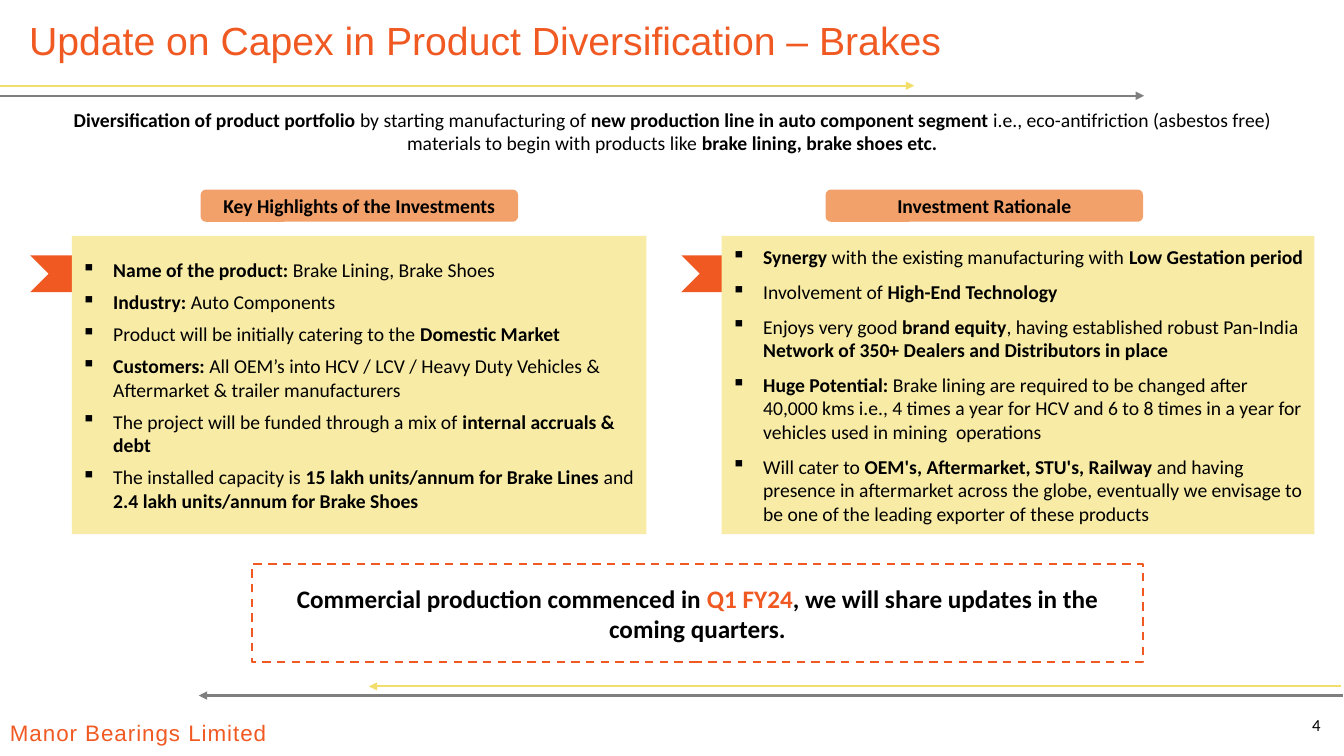
"""Builds the slide on capex in product diversification into brakes."""
from lxml import etree
from pptx import Presentation
from pptx.dml.color import RGBColor
from pptx.enum.dml import MSO_LINE
from pptx.enum.shapes import MSO_CONNECTOR, MSO_SHAPE
from pptx.enum.text import MSO_ANCHOR, PP_ALIGN
from pptx.oxml.ns import qn
from pptx.util import Pt

LEFT, MID, RIGHT = PP_ALIGN.LEFT, PP_ALIGN.CENTER, PP_ALIGN.RIGHT
TOP, CENTRE = MSO_ANCHOR.TOP, MSO_ANCHOR.MIDDLE
RECT, ROUND = MSO_SHAPE.RECTANGLE, MSO_SHAPE.ROUNDED_RECTANGLE
NOTCH = MSO_SHAPE.NOTCHED_RIGHT_ARROW
STRAIGHT, DASH = MSO_CONNECTOR.STRAIGHT, MSO_LINE.DASH
ORANGE, PEACH, CREAM = "F05922", "F2A16A", "F7EBA6"
YELLOW, GREY, BLACK = "F1DE6B", "7F7F7F", "000000"


def rgb(text):
    """Turn a hex string into a colour."""
    return RGBColor.from_string(text)


def write(shape, lines, size=14, color=BLACK, font="Calibri", align=LEFT,
          anchor=CENTRE, gap=0, bullet=False):
    """Fill a shape with paragraphs; text between asterisks is bold."""
    frame = shape.text_frame
    frame.word_wrap = True
    frame.vertical_anchor = anchor
    for i, line in enumerate(lines):
        para = frame.add_paragraph() if i else frame.paragraphs[0]
        para.alignment = align
        para.space_before = Pt(gap if i else 0)
        para.space_after = Pt(gap)
        if bullet:
            props = para._p.get_or_add_pPr()
            props.set("marL", str(Pt(22.5)))
            props.set("indent", str(-Pt(22.5)))
            etree.SubElement(props, qn("a:buChar")).set("char", "▪")
        for j, part in enumerate(line.split("*")):
            if part:
                run = para.add_run()
                run.text = part
                run.font.name = font
                run.font.size = Pt(size)
                run.font.bold = j % 2 == 1
                run.font.color.rgb = rgb(color)
    return frame.paragraphs[0]


deck = Presentation()
deck.slide_width, deck.slide_height = Pt(960), Pt(540)
slide = deck.slides.add_slide(deck.slide_layouts[6])
shapes = slide.shapes

arrows = [
    (959, 142, 496.8, GREY),
    (957.6, 263.5, 490.3, YELLOW),
    (-1.4, 653, 61.2, YELLOW),
    (0, 817.2, 68.4, GREY),
]
for start, end, y, color in arrows:
    arrow = shapes.add_connector(STRAIGHT, Pt(start), Pt(y), Pt(end), Pt(y))
    arrow.line.color.rgb = rgb(color)
    arrow.line.width = Pt(1.5)
    tail = etree.SubElement(arrow.line._get_or_add_ln(), qn("a:tailEnd"))
    tail.set("type", "triangle")
    etree.SubElement(arrow._element.spPr, qn("a:effectLst"))

firm = shapes.add_textbox(Pt(0), Pt(509.8), Pt(215.3), Pt(26.6))
name = write(firm, ["Manor Bearings Limited"], 16, ORANGE, "Arial", anchor=TOP)
name.runs[0]._r.get_or_add_rPr().set("spc", "70")

page = shapes.add_textbox(Pt(919.4), Pt(503.3), Pt(31), Pt(28.8))
write(page, ["4"], 12, align=RIGHT)

title = shapes.add_textbox(Pt(13.7), Pt(10.8), Pt(713.5), Pt(38.9))
head = write(title, ["Update on Capex in Product Diversification – Brakes"],
             28, ORANGE, "Arial")
head.line_spacing = 0.9

intro = shapes.add_textbox(Pt(28.8), Pt(73.4), Pt(902.9), Pt(41))
write(intro, [
    "*Diversification of product portfolio *by starting manufacturing of "
    "*new production line in auto component segment* i.e., eco-antifriction "
    "(asbestos free) materials to begin with products like "
    "*brake lining, brake shoes etc.*"], align=MID, anchor=TOP, gap=4)

facts = [
    "*Name of the product: *Brake Lining, Brake Shoes",
    "*Industry:* Auto Components",
    "Product will be initially catering to the *Domestic Market*",
    "*Customers:* All OEM’s into HCV / LCV / Heavy Duty Vehicles & "
    "Aftermarket & trailer manufacturers",
    "The project will be funded through a mix of *internal accruals & debt*",
    "The installed capacity is *15 lakh units/annum for Brake Lines *and "
    "*2.4 lakh units/annum for Brake Shoes*",
]
reasons = [
    "*Synergy* with the existing manufacturing with *Low Gestation period*",
    "Involvement of *High-End Technology*",
    "Enjoys very good *brand equity*, having established robust Pan-India "
    "*Network of 350+ Dealers and Distributors in place*",
    "*Huge Potential:* Brake lining are required to be changed after 40,000 "
    "kms i.e., 4 times a year for HCV and 6 to 8 times in a year for vehicles "
    "used in mining  operations",
    "Will cater to *OEM's, Aftermarket, STU's, Railway* and having presence "
    "in aftermarket across the globe, eventually we envisage to be one of the "
    "leading exporter of these products",
]
panels = [
    ("*Key Highlights of the Investments*", facts, 21.6, 143.3, 51.3, 410.4, 3),
    ("*Investment Rationale*", reasons, 486.7, 589.7, 515.5, 423.4, 4),
]
for label, points, flag, tab, left, width, gap in panels:
    parts = [
        (NOTCH, flag, 169.2, 74.2, 52.6, ORANGE),
        (ROUND, tab, 135.4, 226.8, 23, PEACH),
        (RECT, left, 168.5, width, 213.1, CREAM),
    ]
    made = []
    for kind, x, y, w, h, color in parts:
        part = shapes.add_shape(kind, Pt(x), Pt(y), Pt(w), Pt(h))
        part.shadow.inherit = False
        part.fill.solid()
        part.fill.fore_color.rgb = rgb(color)
        part.line.fill.background()
        made.append(part)
    write(made[1], [label], align=MID)
    write(made[2], points, gap=gap, bullet=True)

note = shapes.add_shape(RECT, Pt(180), Pt(403.2), Pt(636.5), Pt(69.8))
note.shadow.inherit = False
note.fill.background()
note.line.color.rgb = rgb(ORANGE)
note.line.width = Pt(1.5)
note.line.dash_style = DASH
news = write(note, ["*Commercial production commenced in **Q1 FY24**, we will "
                    "share updates in the coming quarters.*"],
             18, align=MID, gap=6)
news.runs[1].font.color.rgb = rgb(ORANGE)

deck.save("out.pptx")
